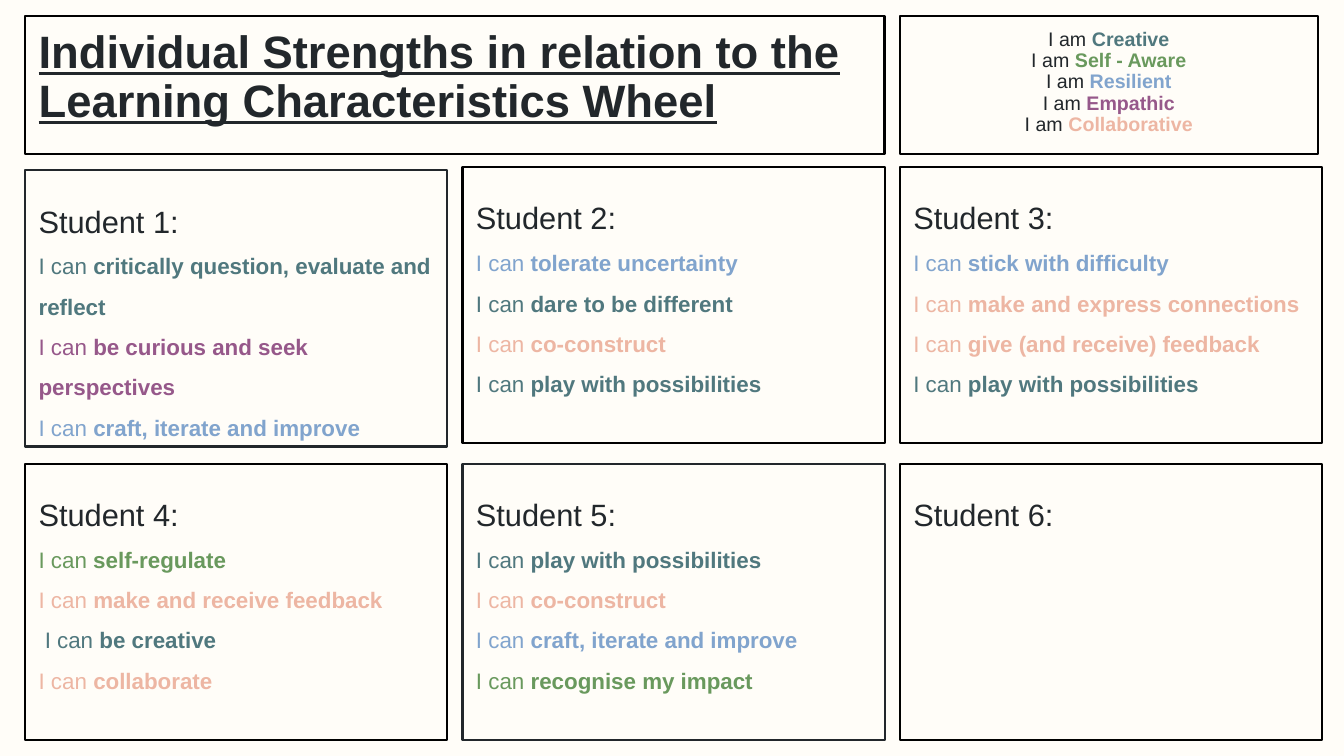
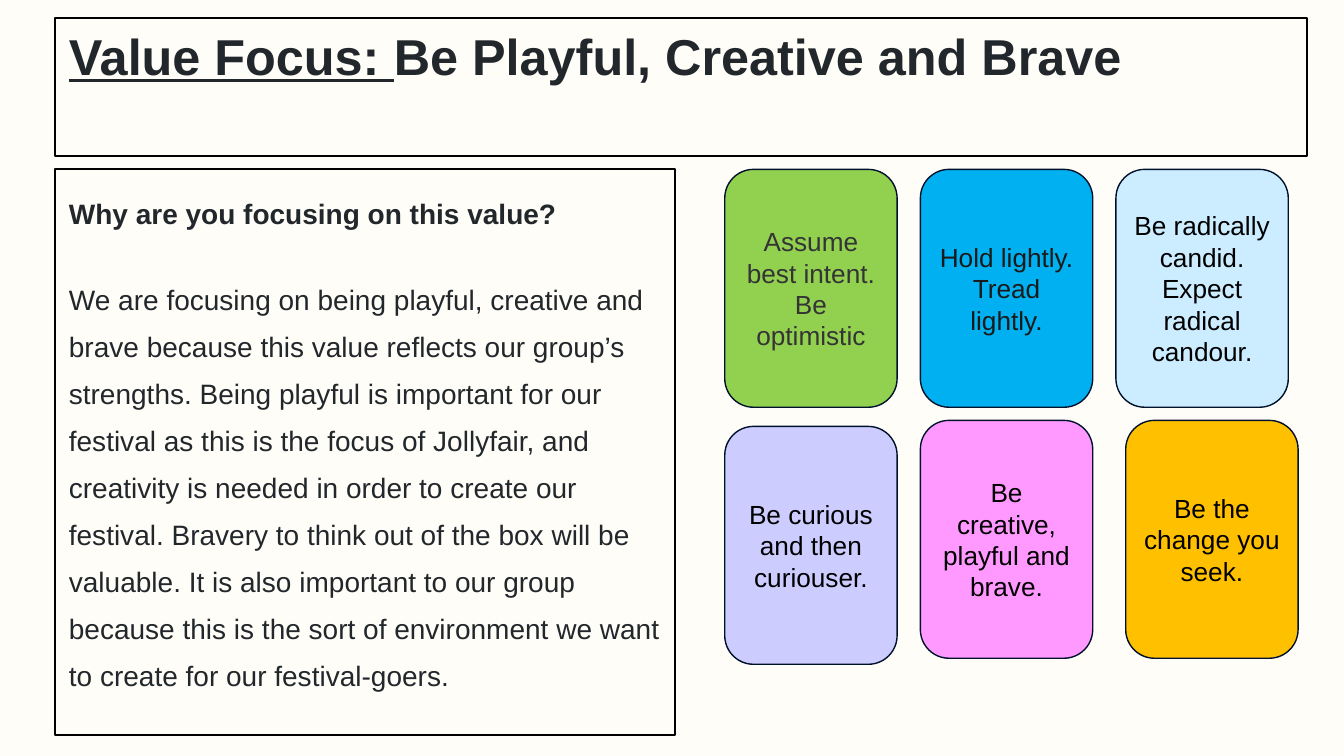
from pptx import Presentation
from pptx.dml.color import RGBColor
from pptx.enum.shapes import MSO_SHAPE
from pptx.enum.text import MSO_ANCHOR, MSO_AUTO_SIZE, PP_ALIGN
from pptx.util import Pt

FONT = "Arial"
PAPER, INK, BLACK, NAVY = "FFFDF8", "22272B", "000000", "00112C"
CREATIVE, AWARE, RESILIENT = "50787E", "69995D", "81A4CD"
EMPATHIC, COLLABORATIVE = "96588A", "EDB6A3"
INSET = 9.6
BAND_H = 98.6

LEGEND = [
    ("Creative", CREATIVE),
    ("Self - Aware", AWARE),
    ("Resilient", RESILIENT),
    ("Empathic", EMPATHIC),
    ("Collaborative", COLLABORATIVE),
]

STUDENTS = [
    [("I can ", "critically question, evaluate and reflect", CREATIVE),
     ("I can ", "be curious and seek perspectives", EMPATHIC),
     ("I can ", "craft, iterate and improve", RESILIENT)],
    [("I can ", "tolerate uncertainty", RESILIENT),
     ("I can ", "dare to be different", CREATIVE),
     ("I can ", "co-construct", COLLABORATIVE),
     ("I can ", "play with possibilities", CREATIVE)],
    [("I can ", "stick with difficulty", RESILIENT),
     ("I can ", "make and express connections", COLLABORATIVE),
     ("I can ", "give (and receive) feedback", COLLABORATIVE),
     ("I can ", "play with possibilities", CREATIVE)],
    [("I can", " self-regulate", AWARE),
     ("I can ", "make and receive feedback", COLLABORATIVE),
     (" I can ", "be creative", CREATIVE),
     ("I can ", "collaborate", COLLABORATIVE)],
    [("I can ", "play with possibilities", CREATIVE),
     ("I can ", "co-construct", COLLABORATIVE),
     ("I can ", "craft, iterate and improve", RESILIENT),
     ("I can ", "recognise my impact", AWARE)],
    [],
]
STUDENT_LINES = [INK, BLACK, BLACK, BLACK, INK, BLACK]
STUDENT_DROPS = [2.2, 0, 0, 0, 0, 0]

QUESTION = "Why are you focusing on this value?"
REASON = (
    "We are focusing on being playful, creative and brave because this value "
    "reflects our group’s strengths. Being playful is important for our festival "
    "as this is the focus of Jollyfair, and creativity is needed in order to "
    "create our festival. Bravery to think out of the box will be valuable. It is "
    "also important to our group because this is the sort of environment we want "
    "to create for our festival-goers."
)

CARDS = [
    ("Assume best intent. Be optimistic", "92D050", "343434", 0, 0),
    ("Hold lightly. Tread lightly.", "00B0F0", "1A1A1A", 0, 0),
    ("Be radically candid. Expect radical candour.", "CCECFF", BLACK, 0, 0),
    ("Be curious and then curiouser.", "CCCCFF", BLACK, 0, 4.3),
    ("Be creative, playful and brave.", "FF99FF", BLACK, 0, 0),
    ("Be the change you seek.", "FFC000", BLACK, 7, 0),
]


def rgb(value):
    """Turn a hex string into a colour."""
    return RGBColor.from_string(value)


def apply(target, values):
    """Set each named attribute on the target."""
    for name, value in values.items():
        setattr(target, name, value)


def run(text, size, color=INK, bold=False, underline=False):
    """Describe one run as its text, colour and font values."""
    return text, color, dict(name=FONT, size=Pt(size), bold=bold, underline=underline)


def write(tf, paragraphs, **layout):
    """Fill a text frame with paragraphs, each a list of runs."""
    for i, runs in enumerate(paragraphs):
        p = tf.add_paragraph() if i else tf.paragraphs[0]
        apply(p, dict(dict(alignment=PP_ALIGN.LEFT), **layout))
        for text, color, values in runs:
            r = p.add_run()
            r.text = text
            apply(r.font, values)
            r.font.color.rgb = rgb(color)


def place(sp, box):
    """Move and size a shape to a box in points."""
    apply(sp, dict(zip(("left", "top", "width", "height"), map(Pt, box))))


def frame(sp, box, line=BLACK):
    """Make a shape an outlined panel and return its text frame."""
    place(sp, box)
    sp.fill.background()
    sp.line.color.rgb = rgb(line)
    sp.line.width = Pt(1.5)
    tf = sp.text_frame
    apply(tf, dict(word_wrap=True, auto_size=MSO_AUTO_SIZE.NONE,
                   vertical_anchor=MSO_ANCHOR.TOP))
    apply(tf, {f"margin_{side}": Pt(INSET) for side in ("left", "top", "right", "bottom")})
    return tf


def add_panel(s, box, line=BLACK):
    """Add an outlined text panel and return its text frame."""
    return frame(s.shapes.add_textbox(*map(Pt, box)), box, line)


def add_titled_slide(prs, box, runs):
    """Add a title-only slide with a framed title."""
    s = prs.slides.add_slide(prs.slide_layouts[5])
    write(frame(s.shapes.title, box), [runs], line_spacing=0.9)
    return s


def add_legend(s, box):
    """Add the centred list of characteristics."""
    lines = [[run("I am ", 14), run(word, 14, color, True)] for word, color in LEGEND]
    write(add_panel(s, box), lines, alignment=PP_ALIGN.CENTER, line_spacing=0.9)


def add_student(s, box, number, strengths, line):
    """Add one student's panel of strengths."""
    lines = [[run(f"Student {number}:", 22)]]
    lines += [[run(lead, 16, color), run(skill, 16, color, True)]
              for lead, skill, color in strengths]
    write(add_panel(s, box, line), lines, line_spacing=1.5)


def add_student_grid(s, box, gap_x=10.8, gap_y=14.4):
    """Place the six student panels in three columns."""
    left, top, width, height = box
    w, h = (width - 2 * gap_x) / 3, (height - gap_y) / 2
    for i, (strengths, line, drop) in enumerate(zip(STUDENTS, STUDENT_LINES, STUDENT_DROPS)):
        row, col = divmod(i, 3)
        cell = (left + col * (w + gap_x), top + row * (h + gap_y) + drop, w, h)
        add_student(s, cell, i + 1, strengths, line)


def add_reason(s, box):
    """Add the question and its answer."""
    tf = add_panel(s, box)
    write(tf, [[run(QUESTION, 20, bold=True)], [run(REASON, 20)]],
          line_spacing=1.4, space_after=Pt(12))
    tf.paragraphs[1].space_before = Pt(16)


def add_card(s, box, text, fill, color):
    """Add one rounded value card."""
    sp = s.shapes.add_shape(MSO_SHAPE.ROUNDED_RECTANGLE, *map(Pt, box))
    sp.shadow.inherit = False
    sp.fill.solid()
    sp.fill.fore_color.rgb = rgb(fill)
    sp.line.color.rgb = rgb(NAVY)
    sp.line.width = Pt(1)
    tf = sp.text_frame
    apply(tf, dict(word_wrap=True, vertical_anchor=MSO_ANCHOR.MIDDLE))
    write(tf, [[run(text, 18.7, color)]], alignment=PP_ALIGN.CENTER)


def add_card_grid(s, box, gap_x=16.6, gap_y=9.4):
    """Place the six value cards in three columns."""
    left, top, width, height = box
    w, h = (width - 2 * gap_x) / 3, (height - gap_y) / 2
    for i, (text, fill, color, dx, dy) in enumerate(CARDS):
        row, col = divmod(i, 3)
        cell = (left + col * (w + gap_x) + dx, top + row * (h + gap_y) + dy, w, h)
        add_card(s, cell, text, fill, color)


def add_strengths_slide(prs):
    """Build the slide of individual strengths."""
    title = "Individual Strengths in relation to the Learning Characteristics Wheel"
    s = add_titled_slide(prs, (18, 11.5, 613.8, BAND_H),
                         [run(title, 32.4, bold=True, underline=True)])
    add_legend(s, (642.6, 11.5, 298.8, BAND_H))
    add_student_grid(s, (18, 119.5, 926.4, 409))


def add_value_slide(prs):
    """Build the slide on the chosen value."""
    s = add_titled_slide(prs, (39.6, 13, 894.2, BAND_H), [
        run("Value Focus: ", 36, bold=True, underline=True),
        run("Be Playful, Creative and Brave", 36, bold=True),
    ])
    add_reason(s, (39.6, 121, 442.8, 404))
    add_card_grid(s, (517.7, 121, 402.5, 349.2))


def main():
    """Build and save the presentation."""
    prs = Presentation()
    apply(prs, dict(slide_width=Pt(960), slide_height=Pt(540)))
    fill = prs.slide_master.background.fill
    fill.solid()
    fill.fore_color.rgb = rgb(PAPER)
    add_strengths_slide(prs)
    add_value_slide(prs)
    prs.save("out.pptx")


if __name__ == "__main__":
    main()
